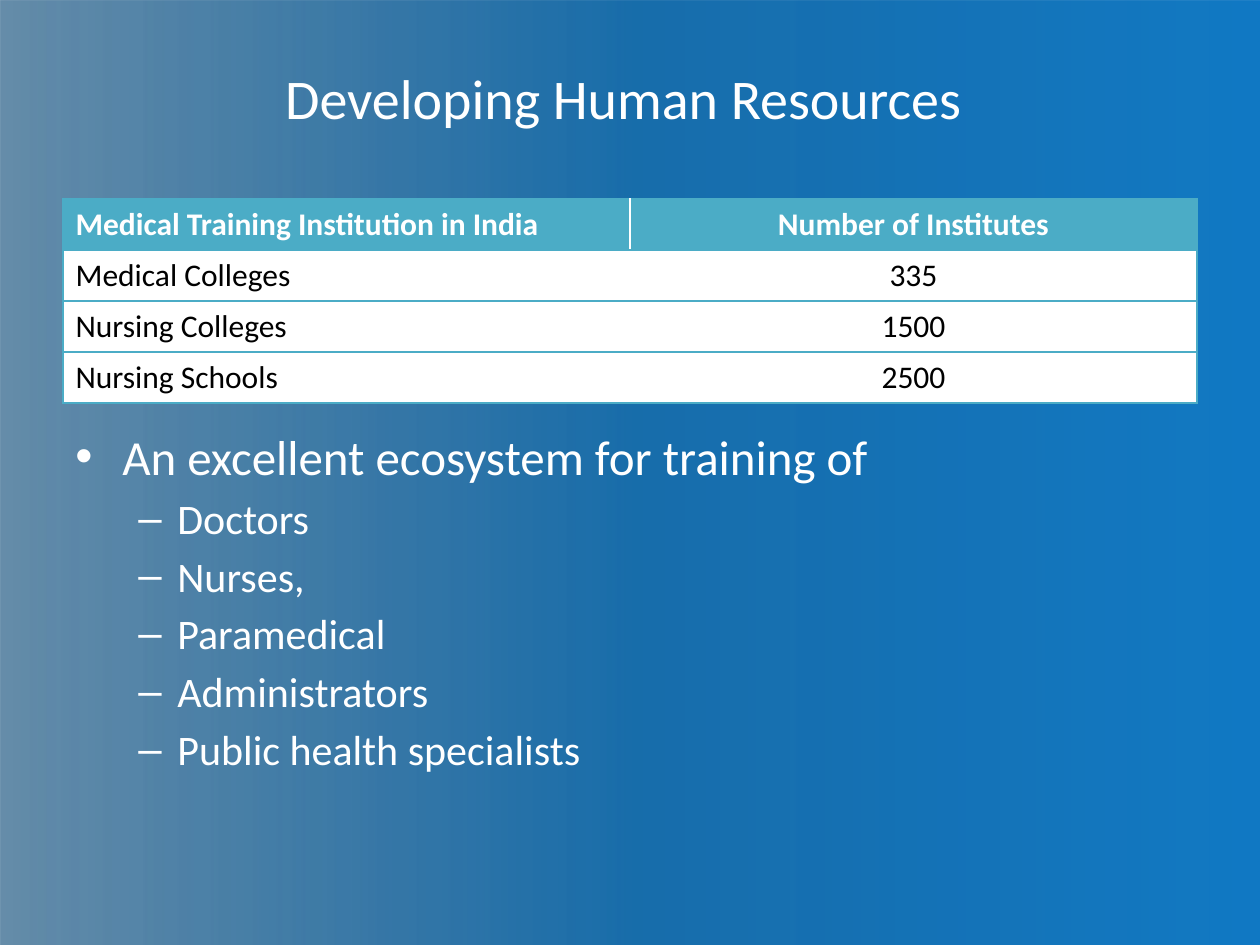
from lxml import etree
from pptx import Presentation
from pptx.dml.color import RGBColor
from pptx.enum.shapes import MSO_SHAPE
from pptx.enum.text import MSO_ANCHOR, PP_ALIGN
from pptx.oxml.ns import qn
from pptx.util import Emu, Pt

RECTANGLE = MSO_SHAPE.RECTANGLE
MIDDLE = MSO_ANCHOR.MIDDLE
LEFT, CENTER = PP_ALIGN.LEFT, PP_ALIGN.CENTER
WHITE = RGBColor(0xFF, 0xFF, 0xFF)
BLACK = RGBColor(0, 0, 0)
TEAL = RGBColor(0x4B, 0xAC, 0xC6)
NAVY = RGBColor(0x00, 0x42, 0x72)
BLUE = RGBColor(0x00, 0x5E, 0xA2)
BRIGHT_BLUE = RGBColor(0x00, 0x70, 0xC0)
FONT = "Calibri"


def px(n):
    return Emu(round(n * 914400 / 126))


def add_run(paragraph, text, size, color, bold=False):
    run = paragraph.add_run()
    run.text = text
    run.font.name = FONT
    run.font.size = Pt(size)
    run.font.bold = bold
    run.font.color.rgb = color


prs = Presentation()
prs.slide_width, prs.slide_height = px(1260), px(945)
slide = prs.slides.add_slide(prs.slide_layouts[6])

# Translucent gradient backdrop
backdrop = slide.shapes.add_shape(RECTANGLE, 0, 0, px(1260), px(945))
backdrop.shadow.inherit = False
backdrop.line.fill.background()
backdrop.fill.gradient()
backdrop.fill.gradient_angle = 0
stops = next(backdrop.element.iter(qn("a:gsLst")))
for old_stop in list(stops):
    stops.remove(old_stop)
for position, color, opacity in [(0, NAVY, 60), (50, BLUE, 90), (100, BRIGHT_BLUE, 93)]:
    stop = etree.SubElement(stops, qn("a:gs"), pos=str(position * 1000))
    tint = etree.SubElement(stop, qn("a:srgbClr"), val=str(color))
    etree.SubElement(tint, qn("a:alpha"), val=str(opacity * 1000))

# Title
title = slide.shapes.add_textbox(px(63), px(38), px(1134), px(119)).text_frame
title.word_wrap = True
title.vertical_anchor = MIDDLE
title.paragraphs[0].alignment = CENTER
add_run(title.paragraphs[0], "Developing Human Resources ", 32, WHITE)

# Training groups
groups = slide.shapes.add_textbox(px(63), px(420), px(1134), px(483)).text_frame
groups.word_wrap = True
lines = ["An excellent ecosystem for training of", "Doctors", "Nurses,",
         "Paramedical", "Administrators", "Public health specialists"]
for i, text in enumerate(lines):
    if i == 0:
        item, level, indent, hang, bullet, size = groups.paragraphs[0], 0, 47, 47, "•", 28
    else:
        item, level, indent, hang, bullet, size = groups.add_paragraph(), 1, 102, 39, "–", 24
        item.space_before = Pt(4.2)
    item.level = level
    props = item._p.get_or_add_pPr()
    props.set("marL", str(px(indent)))
    props.set("indent", str(-px(hang)))
    etree.SubElement(props, qn("a:buFont"), typeface="Arial")
    etree.SubElement(props, qn("a:buChar"), char=bullet)
    add_run(item, text, size, WHITE)

# Institutes table
rows = [("Medical Training Institution in India", "Number of Institutes"),
        ("Medical Colleges", "335"),
        ("Nursing Colleges", "1500"),
        ("Nursing Schools", "2500")]
institutes = slide.shapes.add_table(len(rows), 2, px(63), px(199), px(1134), px(204)).table
institutes.horz_banding = False
for r, row in enumerate(rows):
    institutes.rows[r].height = px(51)
    header = r == 0
    for c, text in enumerate(row):
        cell = institutes.cell(r, c)
        props = cell._tc.get_or_add_tcPr()
        for side in (("lnL", "lnT", "lnB"), ("lnR", "lnT", "lnB"))[c]:
            border = etree.SubElement(props, qn("a:" + side), w=str(Pt(1)))
            solid = etree.SubElement(border, qn("a:solidFill"))
            etree.SubElement(solid, qn("a:srgbClr"), val=str(TEAL))
        cell.fill.solid()
        cell.fill.fore_color.rgb = TEAL if header else WHITE
        entry = cell.text_frame.paragraphs[0]
        entry.alignment = (LEFT, CENTER)[c]
        add_run(entry, text, 18, WHITE if header else BLACK, header)

prs.save("out.pptx")
